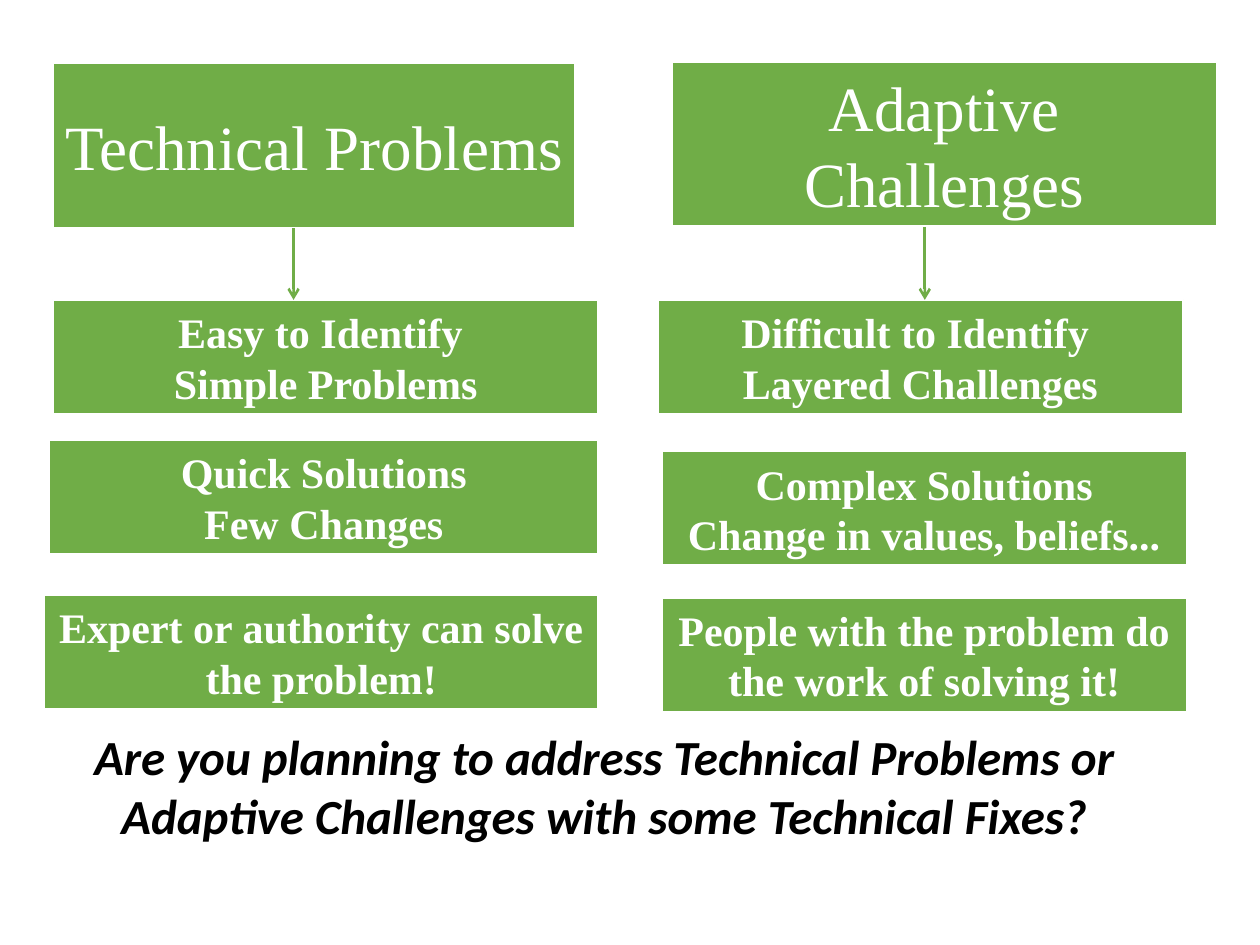
import pptx
import pptx.util
import pptx.dml.color
import pptx.enum.shapes
import pptx.enum.text
import pptx.oxml.ns
from lxml import etree

# Content: each column has its boxes as (left, top, width, kind, lines)
COLUMNS = [
    {
        "arrow": (2.33, 1.81),
        "boxes": [
            (0.42, 0.50, 4.15, "heading", ["Technical Problems"]),
            (0.42, 2.38, 4.33, "point", ["Easy to Identify ", "Simple Problems"]),
            (0.39, 3.49, 4.36, "point", ["Quick Solutions", "Few Changes"]),
            (0.35, 4.72, 4.40, "point", ["Expert or authority can solve the problem!"]),
        ],
    },
    {
        "arrow": (7.34, 1.80),
        "boxes": [
            (5.33, 0.49, 4.33, "heading", ["Adaptive Challenges"]),
            (5.22, 2.38, 4.17, "point", ["Difficult to Identify ", "Layered Challenges"]),
            (5.25, 3.58, 4.17, "point", ["Complex Solutions", "Change in values, beliefs..."]),
            (5.25, 4.74, 4.17, "point", ["People with the problem do the work of solving it!"]),
        ],
    },
]
QUESTION = ["Are you planning to address Technical Problems or "
            "Adaptive Challenges with some Technical Fixes?"]
QUESTION_AREA = (0.42, 5.72, 8.75, 1.04)
ARROW_END = 2.38
BOX_HEIGHT = {"heading": 1.31, "point": 0.91}

GREEN = pptx.dml.color.RGBColor.from_string("70AD47")
WHITE = pptx.dml.color.RGBColor.from_string("FFFFFF")
BLACK = pptx.dml.color.RGBColor.from_string("000000")
THEME = {
    "line": pptx.util.Pt(1.5),
    "heading": {"name": "Times New Roman", "size": pptx.util.Pt(36), "color": WHITE},
    "point": {"name": "Times New Roman", "size": pptx.util.Pt(24), "bold": True, "color": WHITE},
    "question": {"name": "Calibri", "size": pptx.util.Pt(28), "bold": True, "italic": True,
                 "color": BLACK},
}


def inches(*lengths):
    return [pptx.util.Inches(length) for length in lengths]


def write(shape, lines, kind):
    frame = shape.text_frame
    frame.word_wrap = True
    frame.text = "\n".join(lines)
    for paragraph in frame.paragraphs:
        paragraph.alignment = pptx.enum.text.PP_ALIGN.CENTER
        font = paragraph.runs[0].font
        for attribute, value in THEME[kind].items():
            if attribute == "color":
                font.color.rgb = value
            else:
                setattr(font, attribute, value)


def add_box(slide, left, top, width, kind, lines):
    shape = slide.shapes.add_shape(pptx.enum.shapes.MSO_SHAPE.RECTANGLE,
                                   *inches(left, top, width, BOX_HEIGHT[kind]))
    shape.shadow.inherit = False
    shape.fill.solid()
    shape.fill.fore_color.rgb = GREEN
    shape.line.color.rgb = WHITE
    shape.line.width = THEME["line"]
    write(shape, lines, kind)


def add_arrow(slide, x, top):
    connector = slide.shapes.add_connector(pptx.enum.shapes.MSO_CONNECTOR.STRAIGHT,
                                           *inches(x, top, x, ARROW_END))
    connector.line.color.rgb = GREEN
    connector.line.width = THEME["line"]
    # Open arrowhead, no shadow
    qualified = pptx.oxml.ns.qn
    etree.SubElement(connector.line._get_or_add_ln(), qualified("a:tailEnd"), type="arrow")
    etree.SubElement(connector._element.spPr, qualified("a:effectLst"))


def main():
    presentation = pptx.Presentation()
    presentation.slide_width, presentation.slide_height = inches(10, 7.5)
    slide = presentation.slides.add_slide(presentation.slide_layouts[6])

    # Two columns of boxes, each with an arrow below its heading
    for column in COLUMNS:
        for box in column["boxes"]:
            add_box(slide, *box)
        add_arrow(slide, *column["arrow"])

    # Closing question
    write(slide.shapes.add_textbox(*inches(*QUESTION_AREA)), QUESTION, "question")
    presentation.save("out.pptx")


if __name__ == "__main__":
    main()
